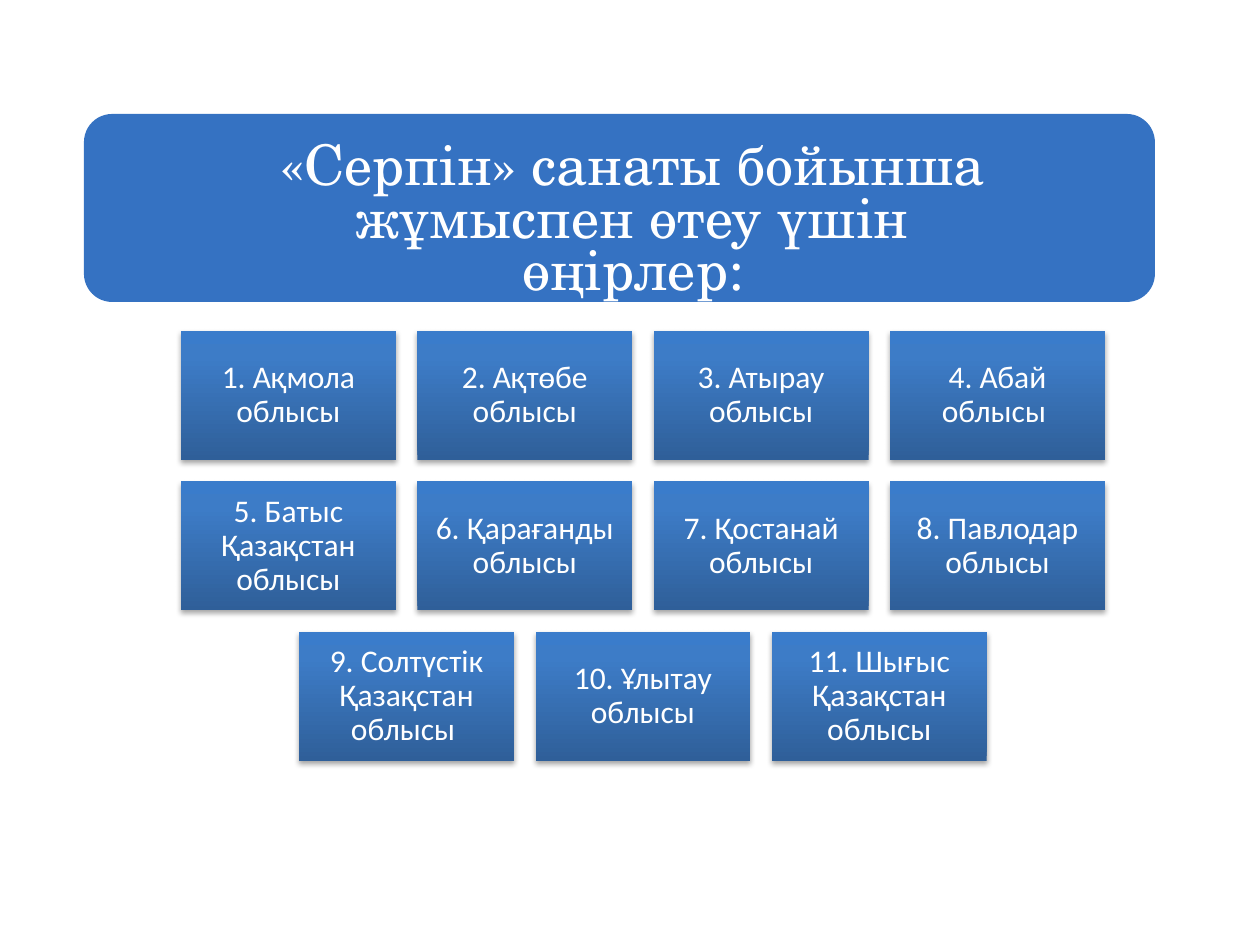
from lxml import etree
from pptx import Presentation, util as u
from pptx.dml.color import RGBColor
from pptx.enum import shapes, text
from pptx.oxml import parse_xml
from pptx.oxml.ns import nsdecls

PX = 914400 // 126
HUES = {"banner": "3572C2", "low": "2F5F99", "mid": "3D7CC7",
        "top": "3A7CCB", "text": "FFFFFF", "shade": "000000"}
TITLE = "«Серпін» санаты бойынша жұмыспен өтеу үшін өңірлер:"
ROWS = [
    ["1. Ақмола облысы", "2. Ақтөбе облысы", "3. Атырау облысы",
     "4. Абай облысы "],
    ["5. Батыс Қазақстан облысы", "6. Қарағанды облысы",
     "7. Қостанай облысы", "8. Павлодар облысы"],
    ["9. Солтүстік Қазақстан облысы ", "10. Ұлытау облысы",
     "11. Шығыс Қазақстан облысы"],
]


def place(box):
    return [u.Emu(round(v * PX)) for v in box]


def write(shape, words, font, size, space, inset=None):
    frame = shape.text_frame
    frame.word_wrap = True
    frame.vertical_anchor = text.MSO_ANCHOR.MIDDLE
    if inset is not None:
        pad = u.Emu(inset * PX)
        frame.margin_left = frame.margin_right = pad
        frame.margin_top = frame.margin_bottom = pad
    par = frame.paragraphs[0]
    par.alignment = text.PP_ALIGN.CENTER
    par.line_spacing = space
    run = par.add_run()
    run.text = words
    run.font.name = font
    run.font.size = u.Pt(size)
    run.font.color.rgb = RGBColor.from_string(HUES["text"])


def banner(slide, box):
    x, y, w, h = box
    back = slide.shapes.add_shape(
        shapes.MSO_SHAPE.ROUNDED_RECTANGLE, *place(box))
    back.adjustments[0] = 0.15
    back.shadow.inherit = False
    back.fill.solid()
    back.fill.fore_color.rgb = RGBColor.from_string(HUES["banner"])
    back.line.fill.background()
    # The heading sits in its own box, inside the banner
    head = slide.shapes.add_textbox(*place((x + 142, y + 59, 814, 101)))
    write(head, TITLE, "TeX Gyre Schola", 32, u.Pt(30))


def shade(tile):
    """Give a tile its vertical gradient and soft drop shadow."""
    stops = "".join(
        f'<a:gs pos="{pos}000"><a:srgbClr val="{HUES[hue]}"/></a:gs>'
        for pos, hue in ((0, "low"), (80, "mid"), (100, "top")))
    fill = parse_xml(
        f'<a:gradFill {nsdecls("a")} rotWithShape="1"><a:gsLst>{stops}</a:gsLst>'
        '<a:lin ang="16200000" scaled="0"/></a:gradFill>')
    tile.line.fill.background()
    tile.shadow.inherit = False
    props = tile._element.spPr
    props.find("{*}prstGeom").addnext(fill)
    cast = parse_xml(
        f'<a:outerShdw {nsdecls("a")} blurRad="{u.Pt(3.1)}" '
        f'dist="{u.Pt(1.8)}" dir="5400000" rotWithShape="0">'
        f'<a:srgbClr val="{HUES["shade"]}"><a:alpha val="35000"/></a:srgbClr>'
        '</a:outerShdw>')
    props.find("{*}effectLst").append(cast)


def grid(slide, box, rows):
    x, y, wide, high = box
    most = max(len(row) for row in rows)
    # Gaps are a tenth of a tile's width, both ways
    w = wide / (most + (most - 1) / 10)
    gap = w / 10
    h = (high - gap * (len(rows) - 1)) / len(rows)
    for r, row in enumerate(rows):
        # A short row is centred
        left = x + (most - len(row)) * (w + gap) / 2
        for c, words in enumerate(row):
            spot = (left + c * (w + gap), y + r * (h + gap), w, h)
            tile = slide.shapes.add_shape(
                shapes.MSO_SHAPE.RECTANGLE, *place(spot))
            shade(tile)
            write(tile, words, "Calibri", 18, 0.9, inset=9)


def main():
    deck = Presentation()
    deck.slide_width, deck.slide_height = place((1260, 945))
    slide = deck.slides.add_slide(deck.slide_layouts[6])
    banner(slide, (84, 114, 1071, 188))
    grid(slide, (181, 331, 924, 430), ROWS)
    deck.save("out.pptx")


if __name__ == "__main__":
    main()
